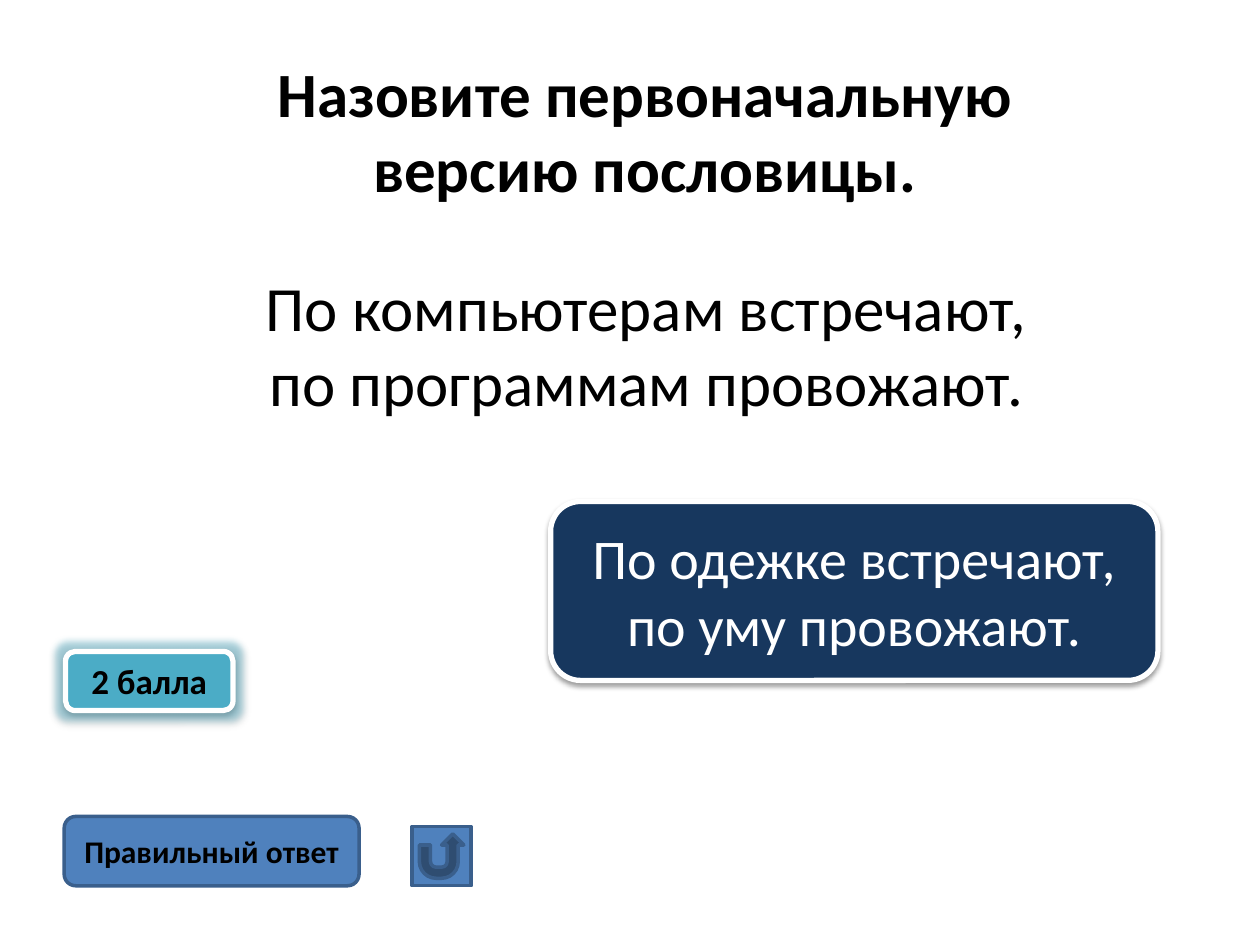
"""Build a quiz slide about the first version of a proverb."""
from dataclasses import dataclass

from lxml.etree import SubElement
from pptx import Presentation
from pptx.dml.color import RGBColor
from pptx.enum.shapes import MSO_SHAPE
from pptx.enum.text import MSO_ANCHOR, MSO_AUTO_SIZE, PP_ALIGN
from pptx.oxml.ns import qn
from pptx.util import Inches, Pt

BLACK, WHITE = "000000", "FFFFFF"
BLUE, DARK_BLUE = "4F81BD", "3A5F8C"
NAVY, TEAL = "17375E", "4BACC6"


@dataclass(frozen=True)
class Button:
    left: float
    top: float
    width: float
    height: float
    fill: str
    line: str
    line_width: float
    text: str = ""
    size: int = 18
    color: str = BLACK
    bold: bool = True
    preset: MSO_SHAPE = MSO_SHAPE.ROUNDED_RECTANGLE
    raised: bool = False
    glow: str = ""


BUTTONS = [
    Button(0.51, 6.48, 2.34, 0.55, BLUE, DARK_BLUE, 2, "Правильный ответ"),
    Button(3.27, 6.56, 0.47, 0.47, BLUE, DARK_BLUE, 2,
           preset=MSO_SHAPE.ACTION_BUTTON_RETURN),
    Button(0.52, 5.17, 1.33, 0.47, TEAL, WHITE, 3, "2 балла", 20,
           raised=True, glow=TEAL),
    Button(4.37, 3.98, 4.82, 1.42, NAVY, WHITE, 3,
           "По одежке встречают, по уму провожают.", 32, WHITE, False, raised=True),
]


def rgb(color: str) -> RGBColor:
    return RGBColor.from_string(color)


def write(frame, text: str, size: int, color: str, bold: bool, anchor) -> None:
    frame.word_wrap = True
    frame.vertical_anchor = anchor
    para = frame.paragraphs[0]
    para.alignment = PP_ALIGN.CENTER
    span = para.add_run()
    span.text = text
    span.font.name = "Calibri"
    span.font.size = Pt(size)
    span.font.bold = bold
    span.font.color.rgb = rgb(color)


def add_effect(effects, tag: str, color: str, opacity: int, **settings: int) -> None:
    attributes = {name: str(value) for name, value in settings.items()}
    effect = SubElement(effects, qn(tag), attributes)
    tint = SubElement(effect, qn("a:srgbClr"), val=color)
    SubElement(tint, qn("a:alpha"), val=str(opacity * 1000))


def draw_button(page, button: Button) -> None:
    shape = page.shapes.add_shape(
        button.preset, Inches(button.left), Inches(button.top),
        Inches(button.width), Inches(button.height))
    shape.shadow.inherit = False
    shape.fill.solid()
    shape.fill.fore_color.rgb = rgb(button.fill)
    shape.line.color.rgb = rgb(button.line)
    shape.line.width = Pt(button.line_width)
    effects = shape._element.spPr.find(qn("a:effectLst"))
    if button.glow:
        add_effect(effects, "a:glow", button.glow, 40, rad=Pt(8))
    if button.raised:
        add_effect(effects, "a:outerShdw", BLACK, 38, blurRad=Pt(3.1),
                   dist=Pt(1.6), dir=90 * 60000, rotWithShape=0)
    if button.text:
        write(shape.text_frame, button.text, button.size, button.color,
              button.bold, MSO_ANCHOR.MIDDLE)


def fill_heading(box, left: float, top: float, text: str, bold: bool) -> None:
    box.left, box.top = Inches(left), Inches(top)
    box.width, box.height = Inches(6.76), Inches(1.31)
    write(box.text_frame, text, 36, BLACK, bold, MSO_ANCHOR.TOP)
    box.text_frame.auto_size = MSO_AUTO_SIZE.SHAPE_TO_FIT_TEXT


def main() -> None:
    deck = Presentation()
    deck.slide_width, deck.slide_height = Inches(10), Inches(7.5)
    page = deck.slides.add_slide(deck.slide_layouts[5])
    for button in BUTTONS:
        draw_button(page, button)
    proverb = page.shapes.add_textbox(0, 0, 0, 0)
    fill_heading(proverb, 1.75, 2.08,
                 "По компьютерам встречают, по программам провожают.", False)
    fill_heading(page.shapes.title, 1.74, 0.38,
                 "Назовите первоначальную версию пословицы.", True)
    deck.save("out.pptx")


if __name__ == "__main__":
    main()
